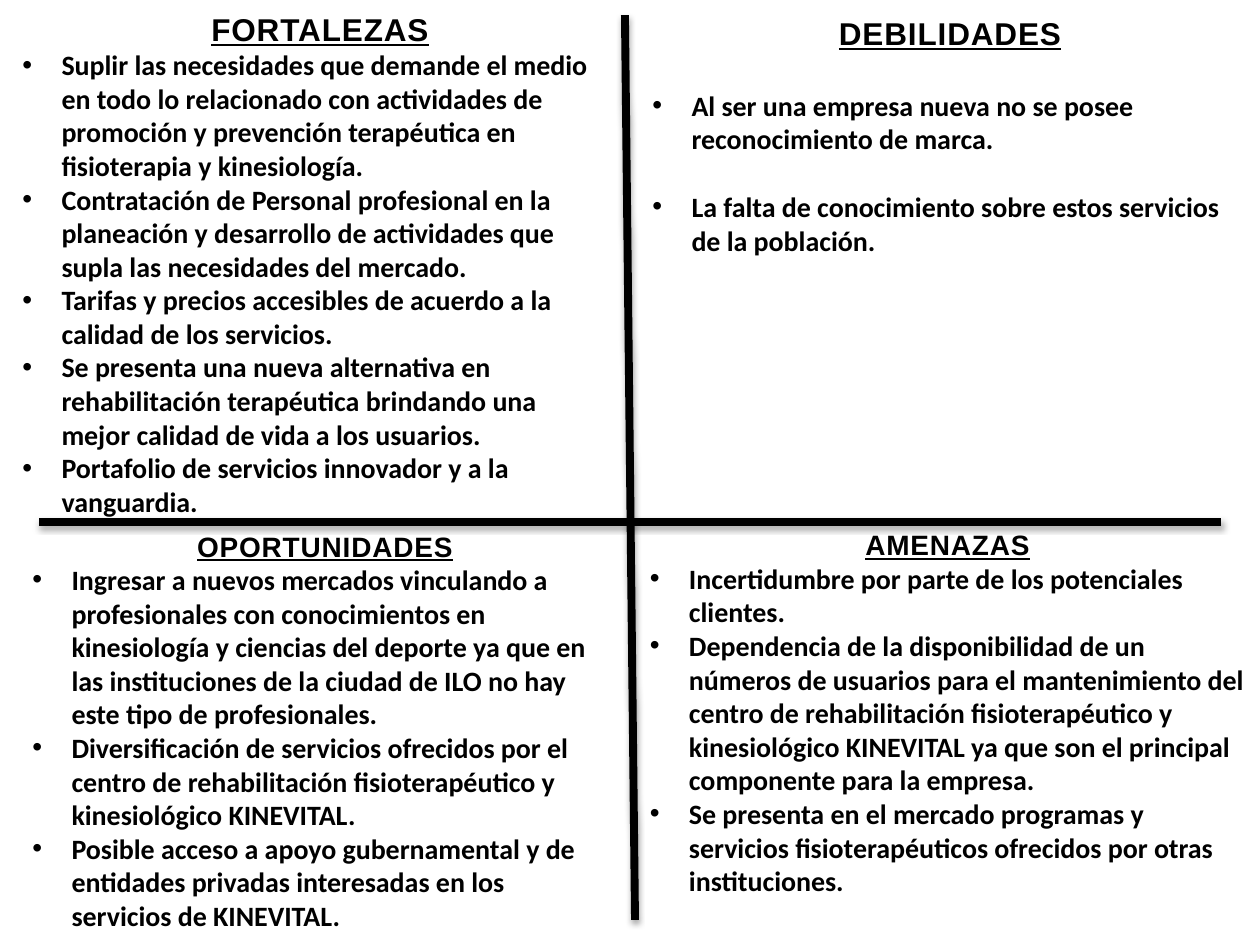
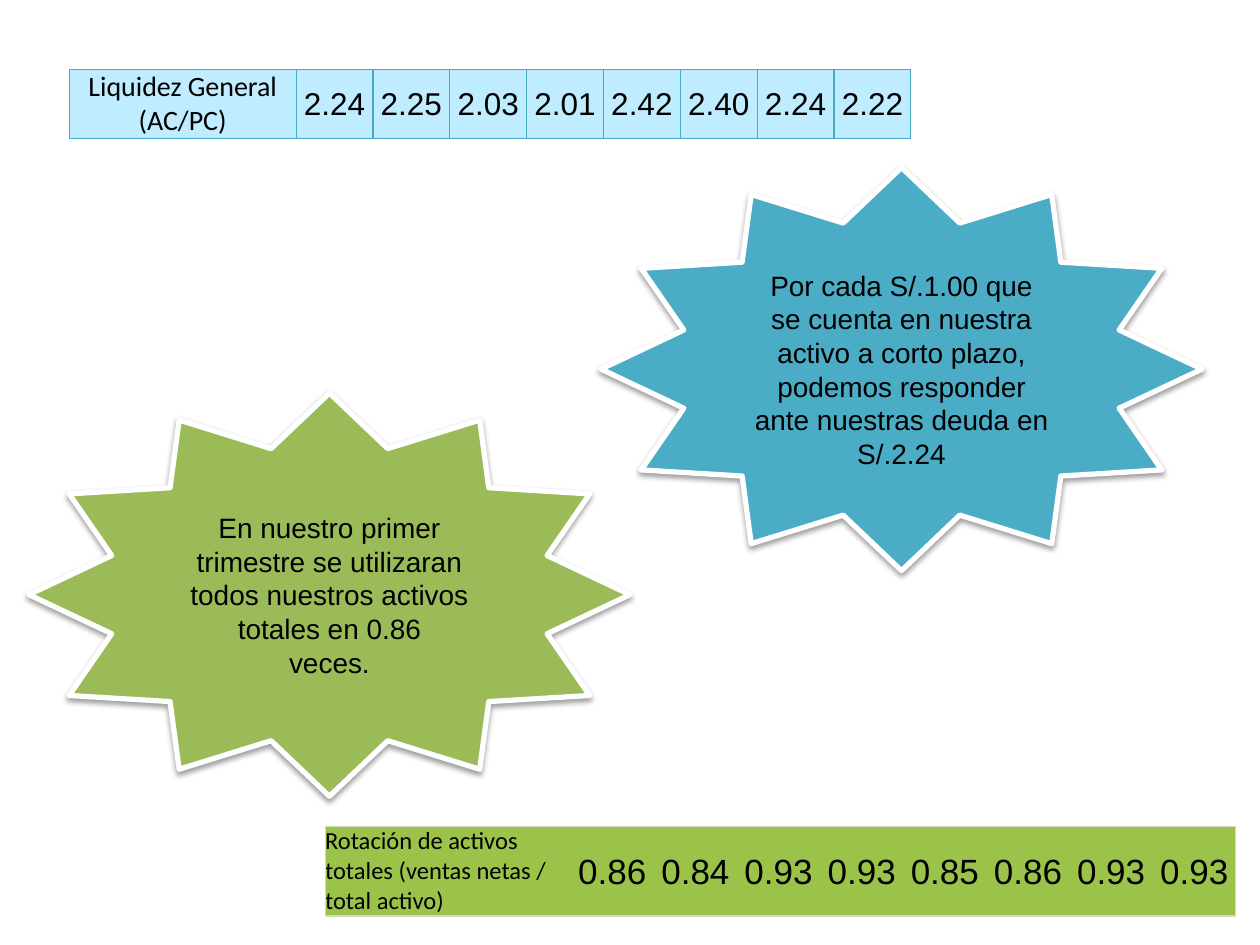
from lxml.etree import SubElement
from pptx import Presentation
from pptx.dml.color import RGBColor
from pptx.enum.shapes import MSO_CONNECTOR, MSO_SHAPE
from pptx.enum.text import MSO_ANCHOR, PP_ALIGN
from pptx.oxml import parse_xml
from pptx.oxml.ns import nsdecls, qn
from pptx.util import Inches, Pt

COLORS = {
    "black": "000000", "white": "FFFFFF",
    "teal": "4BACC6", "green": "9BBB59",
    "pale blue": "C0ECFF", "blue edge": "46AAC5",
    "lime": "9CC349", "lime edge": "D0DCBF",
}
HEADING_FONT, BODY_FONT = "Arial", "Calibri"
PLAIN_TABLE = "{2D5ABB26-0587-4C30-8999-92F81FD0307C}"


def rgb(name):
    return RGBColor.from_string(COLORS[name])


class SlideBuilder:
    def __init__(self, deck):
        self.deck = deck
        self.page = None

    def new_page(self):
        self.page = self.deck.slides.add_slide(self.deck.slide_layouts[6])

    def style(self, para, font, size, bold=False, align=PP_ALIGN.LEFT):
        para.alignment = align
        para.font.name = font
        para.font.size = Pt(size)
        para.font.bold = bold
        para.font.color.rgb = rgb("black")

    def shadow(self, shape, opacity, distance):
        properties = shape._element.spPr
        for old in properties.findall(qn("a:effectLst")):
            properties.remove(old)
        properties.append(parse_xml(
            f'<a:effectLst {nsdecls("a")}><a:outerShdw blurRad="{Pt(3.1)}" '
            f'dist="{Pt(distance)}" dir="5400000" rotWithShape="0">'
            f'<a:srgbClr val="{COLORS["black"]}"><a:alpha val="{opacity * 1000}"/>'
            '</a:srgbClr></a:outerShdw></a:effectLst>'))

    def bar(self, x1, y1, x2, y2):
        line = self.page.shapes.add_connector(
            MSO_CONNECTOR.STRAIGHT, Inches(x1), Inches(y1), Inches(x2), Inches(y2))
        line.line.color.rgb = rgb("black")
        line.line.width = Pt(4.5)
        self.shadow(line, 35, 1.8)

    def quadrant(self, left, top, width, height, title, title_size, points, gaps=()):
        """Underlined heading over bulleted points; gaps are spaces before them."""
        box = self.page.shapes.add_textbox(
            Inches(left), Inches(top), Inches(width), Inches(height))
        frame = box.text_frame
        frame.word_wrap = True
        heading = frame.paragraphs[0]
        span = heading.add_run()
        span.text = title
        span._r.get_or_add_rPr().set("spc", "50")
        self.style(heading, HEADING_FONT, title_size, True, PP_ALIGN.CENTER)
        heading.font.underline = True
        for index, point in enumerate(points):
            para = frame.add_paragraph()
            para.text = point
            if gaps:
                para.space_before = Pt(gaps[index])
            layout = para._p.get_or_add_pPr()
            layout.set("marL", str(Inches(0.31)))
            layout.set("indent", str(-Inches(0.31)))
            SubElement(layout, qn("a:buFont")).set("typeface", "Arial")
            SubElement(layout, qn("a:buChar")).set("char", "•")
            self.style(para, BODY_FONT, 16, True)

    def star(self, left, top, color, lines):
        star = self.page.shapes.add_shape(
            MSO_SHAPE.STAR_12_POINT, Inches(left), Inches(top), Inches(4.77), Inches(3.2))
        star.fill.solid()
        star.fill.fore_color.rgb = rgb(color)
        star.line.color.rgb = rgb("white")
        star.line.width = Pt(3)
        self.shadow(star, 38, 1.6)
        frame = star.text_frame
        frame.word_wrap = True
        frame.vertical_anchor = MSO_ANCHOR.MIDDLE
        frame.text = "\n".join(lines)
        for para in frame.paragraphs:
            self.style(para, HEADING_FONT, 16, align=PP_ALIGN.CENTER)

    def cell_borders(self, cell, sides, color):
        properties = cell._tc.get_or_add_tcPr()
        for index, side in enumerate(sides):
            properties.insert(index, parse_xml(
                f'<a:ln{side} {nsdecls("a")} w="{Pt(0.75)}"><a:solidFill>'
                f'<a:srgbClr val="{COLORS[color]}"/></a:solidFill></a:ln{side}>'))

    def ratio_row(self, left, top, height, label, values, label_width, value_width,
                  label_size, value_size, label_align, fill, edge, inner_lines):
        """One-row table: a ratio's name and its value in each period."""
        count = len(values)
        frame = self.page.shapes.add_table(
            1, count + 1, Inches(left), Inches(top),
            Inches(label_width + count * value_width), Inches(height))
        table = frame.table
        table.first_row = table.horz_banding = False
        table._tbl.tblPr.find(qn("a:tableStyleId")).text = PLAIN_TABLE
        for index, content in enumerate([label, *values]):
            is_label = index == 0
            table.columns[index].width = Inches(label_width if is_label else value_width)
            cell = table.cell(0, index)
            cell.text = content
            cell.vertical_anchor = MSO_ANCHOR.MIDDLE
            margin = Inches(0 if is_label else 0.01)
            cell.margin_left = cell.margin_right = cell.margin_top = margin
            cell.margin_bottom = 0
            cell.fill.solid()
            cell.fill.fore_color.rgb = rgb(fill)
            sides = ["T", "B"]
            if inner_lines or index == count:
                sides.insert(0, "R")
            if inner_lines or is_label:
                sides.insert(0, "L")
            self.cell_borders(cell, sides, edge)
            para = cell.text_frame.paragraphs[0]
            if is_label:
                self.style(para, BODY_FONT, label_size, align=label_align)
            else:
                self.style(para, HEADING_FONT, value_size, align=PP_ALIGN.CENTER)


def build_swot(builder):
    builder.new_page()
    builder.quadrant(0.08, 0.03, 4.92, 4.34, "FORTALEZAS", 18, [
        "Suplir las necesidades que demande el medio en todo lo relacionado con "
        "actividades de promoción y prevención terapéutica en fisioterapia y kinesiología.",
        "Contratación de Personal profesional en la planeación y desarrollo de "
        "actividades que supla las necesidades del mercado.",
        "Tarifas y precios accesibles de acuerdo a la calidad de los servicios.",
        "Se presenta una nueva alternativa en\vrehabilitación terapéutica brindando "
        "una\vmejor calidad de vida a los usuarios.",
        "Portafolio de servicios innovador y a la vanguardia.",
    ])
    # Cross that separates the quadrants
    builder.bar(4.96, 0.12, 5.04, 7.3)
    builder.bar(0.31, 4.14, 9.69, 4.14)
    builder.quadrant(5.08, 0.06, 4.92, 2.05, "DEBILIDADES", 18, [
        "Al ser una empresa nueva no se posee reconocimiento de marca.",
        "La falta de conocimiento sobre estos servicios de la población.",
    ], gaps=(21, 19.5))
    builder.quadrant(0.16, 4.15, 4.84, 3.6, "OPORTUNIDADES", 16, [
        "Ingresar a nuevos mercados vinculando a\vprofesionales con conocimientos "
        "en\vkinesiología y ciencias del deporte ya que en las instituciones de la "
        "ciudad de ILO no hay este tipo de profesionales.",
        "Diversificación de servicios ofrecidos por el centro de rehabilitación "
        "fisioterapéutico y kinesiológico KINEVITAL.",
        "Posible acceso a apoyo gubernamental y de\ventidades privadas interesadas "
        "en los\vservicios de KINEVITAL.",
    ])
    builder.quadrant(5.06, 4.14, 4.92, 3.7, "AMENAZAS", 16, [
        "Incertidumbre por parte de los potenciales clientes.",
        "Dependencia de la disponibilidad de un números de usuarios para el "
        "mantenimiento del centro de rehabilitación fisioterapéutico y kinesiológico "
        "KINEVITAL ya que son el principal componente para la empresa.",
        "Se presenta en el mercado programas y servicios fisioterapéuticos ofrecidos "
        "por otras instituciones.",
    ])


def build_ratios(builder):
    builder.new_page()
    # Liquidity
    builder.ratio_row(
        0.55, 0.55, 0.55, "Liquidez General (AC/PC)",
        ["2.24", "2.25", "2.03", "2.01", "2.42", "2.40", "2.24", "2.22"],
        1.8, 0.61, 16, 18, PP_ALIGN.CENTER, "pale blue", "blue edge", True)
    builder.star(4.77, 1.33, "teal", [
        "Por cada S/.1.00 que se cuenta en nuestra activo a corto plazo, podemos "
        "responder ante nuestras deuda en S/.2.24"])
    # Asset turnover
    builder.ratio_row(
        2.58, 6.56, 0.7, "Rotación de activos totales (ventas netas / total activo)",
        ["0.86", "0.84", "0.93", "0.93", "0.85", "0.86", "0.93", "0.93"],
        1.95, 0.66, 14, 20, PP_ALIGN.LEFT, "lime", "lime edge", False)
    builder.star(0.23, 3.12, "green", [
        "En nuestro primer trimestre se utilizaran todos nuestros activos totales en 0.86",
        "veces."])


def main():
    deck = Presentation()
    deck.slide_width, deck.slide_height = Inches(10), Inches(7.5)
    builder = SlideBuilder(deck)
    build_swot(builder)
    build_ratios(builder)
    deck.save("out.pptx")


if __name__ == "__main__":
    main()
